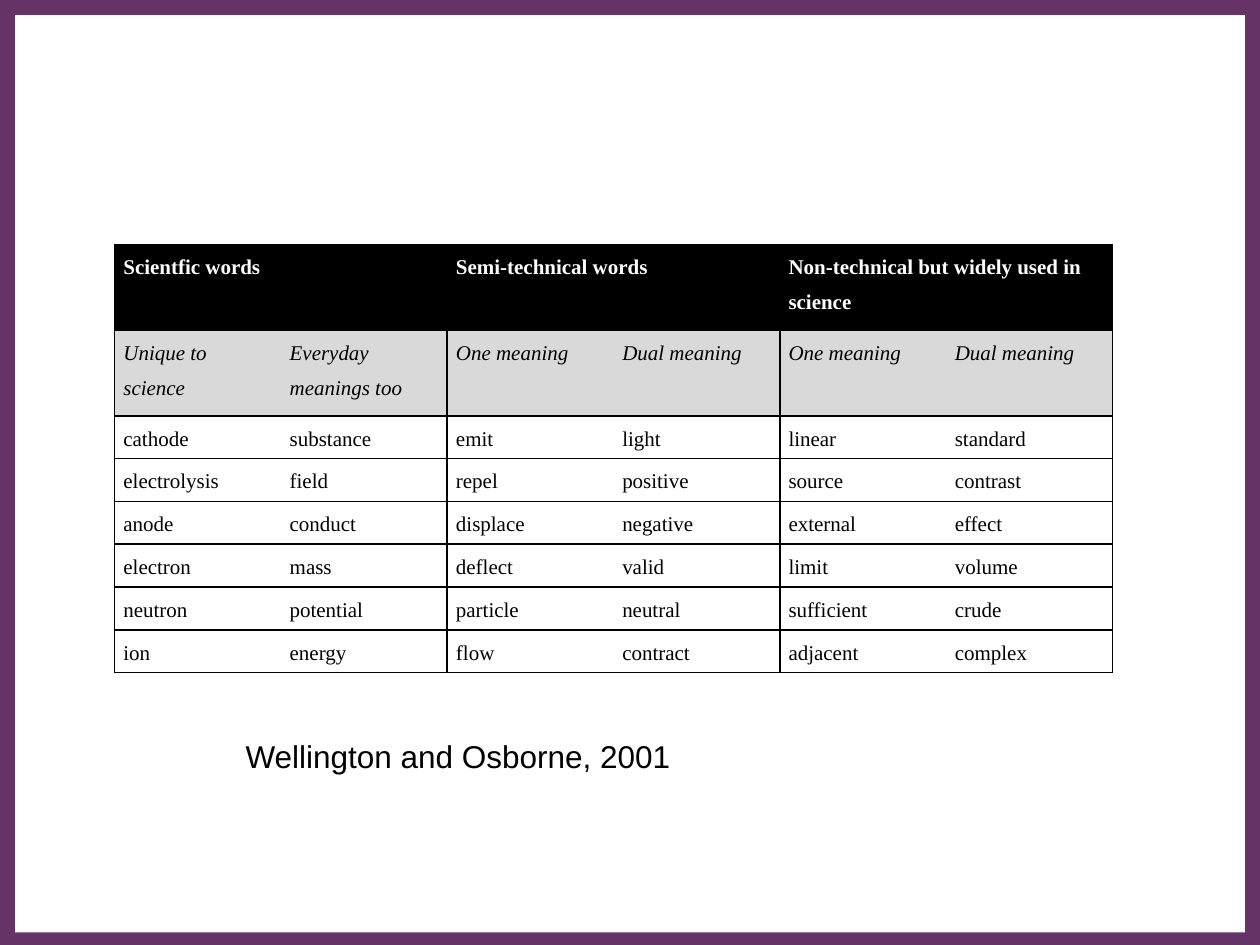
from dataclasses import dataclass

from lxml import etree
from pptx import Presentation
from pptx.dml.color import RGBColor
from pptx.enum.shapes import MSO_SHAPE
from pptx.enum.text import MSO_AUTO_SIZE
from pptx.oxml.ns import qn
from pptx.util import Inches, Pt

RECTANGLE = MSO_SHAPE.RECTANGLE
FIT_SHAPE = MSO_AUTO_SIZE.SHAPE_TO_FIT_TEXT
NO_STYLE_NO_GRID = "{2D5ABB26-0587-4C30-8999-92F81FD0307C}"

GROUPS = ["Scientfic words", "Semi-technical words",
          "Non-technical but widely used in science"]
MEANINGS = ["Unique to science", "Everyday meanings too",
            "One meaning", "Dual meaning", "One meaning", "Dual meaning"]
WORDS = [
    ["cathode", "substance", "emit", "light", "linear", "standard"],
    ["electrolysis", "field", "repel", "positive", "source", "contrast"],
    ["anode", "conduct", "displace", "negative", "external", "effect"],
    ["electron", "mass", "deflect", "valid", "limit", "volume"],
    ["neutron", "potential", "particle", "neutral", "sufficient", "crude"],
    ["ion", "energy", "flow", "contract", "adjacent", "complex"],
]


@dataclass(frozen=True)
class Theme:
    frame: RGBColor = RGBColor(0x66, 0x33, 0x66)
    paper: RGBColor = RGBColor(0xFF, 0xFF, 0xFF)
    ink: RGBColor = RGBColor(0, 0, 0)
    subhead: RGBColor = RGBColor(0xD9, 0xD9, 0xD9)
    table_font: str = "Times New Roman"
    source_font: str = "Arial"
    table_size: Pt = Pt(12)
    source_size: Pt = Pt(18)
    rule: Pt = Pt(1)


class SlideBuilder:
    def __init__(self, slide, theme):
        self.slide = slide
        self.theme = theme

    def panel(self, left, top, width, height, color):
        panel = self.slide.shapes.add_shape(
            RECTANGLE, Inches(left), Inches(top), Inches(width), Inches(height))
        panel.shadow.inherit = False
        panel.fill.solid()
        panel.fill.fore_color.rgb = color
        panel.line.fill.background()

    def run(self, paragraph, text, font, size, color, bold=False, italic=False):
        run = paragraph.add_run()
        run.text = text
        run.font.name = font
        run.font.size = size
        run.font.color.rgb = color
        run.font.bold = bold
        run.font.italic = italic

    def citation(self, left, top, width, height, text):
        box = self.slide.shapes.add_textbox(
            Inches(left), Inches(top), Inches(width), Inches(height))
        box.text_frame.word_wrap = False
        box.text_frame.auto_size = FIT_SHAPE
        self.run(box.text_frame.paragraphs[0], text, self.theme.source_font,
                 self.theme.source_size, self.theme.ink)

    def table(self, left, top, column_width, row_heights):
        columns = len(MEANINGS)
        table = self.slide.shapes.add_table(
            len(row_heights), columns, Inches(left), Inches(top),
            Inches(column_width * columns), Inches(sum(row_heights))).table
        table.first_row = False
        table.horz_banding = False
        table._tbl.tblPr.find(qn("a:tableStyleId")).text = NO_STYLE_NO_GRID
        for column in table.columns:
            column.width = Inches(column_width)
        for row, height in zip(table.rows, row_heights):
            row.height = Inches(height)
        return table

    def borders(self, cell, sides):
        """Rule the given sides (from "LRTB") and leave the others open."""
        properties = cell._tc.get_or_add_tcPr()
        for side in "LRTB":
            line = etree.SubElement(properties, qn(f"a:ln{side}"),
                                    w=str(self.theme.rule))
            if side in sides:
                fill = etree.SubElement(line, qn("a:solidFill"))
                etree.SubElement(fill, qn("a:srgbClr"), val=str(self.theme.ink))
            else:
                etree.SubElement(line, qn("a:noFill"))

    def cell(self, cell, text, sides, fill=None, color=None, **emphasis):
        cell.margin_left = cell.margin_right = Inches(0.07)
        cell.margin_top = cell.margin_bottom = 0
        self.borders(cell, sides)
        if fill is None:
            cell.fill.background()
        else:
            cell.fill.solid()
            cell.fill.fore_color.rgb = fill
        paragraph = cell.text_frame.paragraphs[0]
        paragraph.line_spacing = 1.5
        if text:
            self.run(paragraph, text, self.theme.table_font,
                     self.theme.table_size, color or self.theme.ink, **emphasis)

    def word_table(self, left, top):
        theme = self.theme
        table = self.table(left, top, 1.32, [0.68] * 2 + [0.34] * len(WORDS))
        for group, title in enumerate(GROUPS):
            first, second = (table.cell(0, 2 * group + i) for i in range(2))
            first.merge(second)
            for cell, text in ((first, title), (second, "")):
                self.cell(cell, text, "LRTB", theme.ink, theme.paper, bold=True)
        for row, words in enumerate([MEANINGS] + WORDS, start=1):
            style = {"fill": theme.subhead, "italic": True} if row == 1 else {}
            for column, word in enumerate(words):
                sides = "RTB" if column % 2 else "LTB"
                self.cell(table.cell(row, column), word, sides, **style)


def main():
    presentation = Presentation()
    presentation.slide_width = Inches(10)
    presentation.slide_height = Inches(7.5)
    theme = Theme()
    slide = presentation.slides.add_slide(presentation.slide_layouts[6])
    builder = SlideBuilder(slide, theme)
    builder.panel(0, 0, 10, 7.5, theme.frame)
    builder.panel(0.12, 0.12, 9.76, 7.28, theme.paper)
    builder.word_table(0.91, 1.94)
    builder.citation(1.85, 5.8, 3.61, 0.4, "Wellington and Osborne, 2001")
    presentation.save("out.pptx")


if __name__ == "__main__":
    main()
